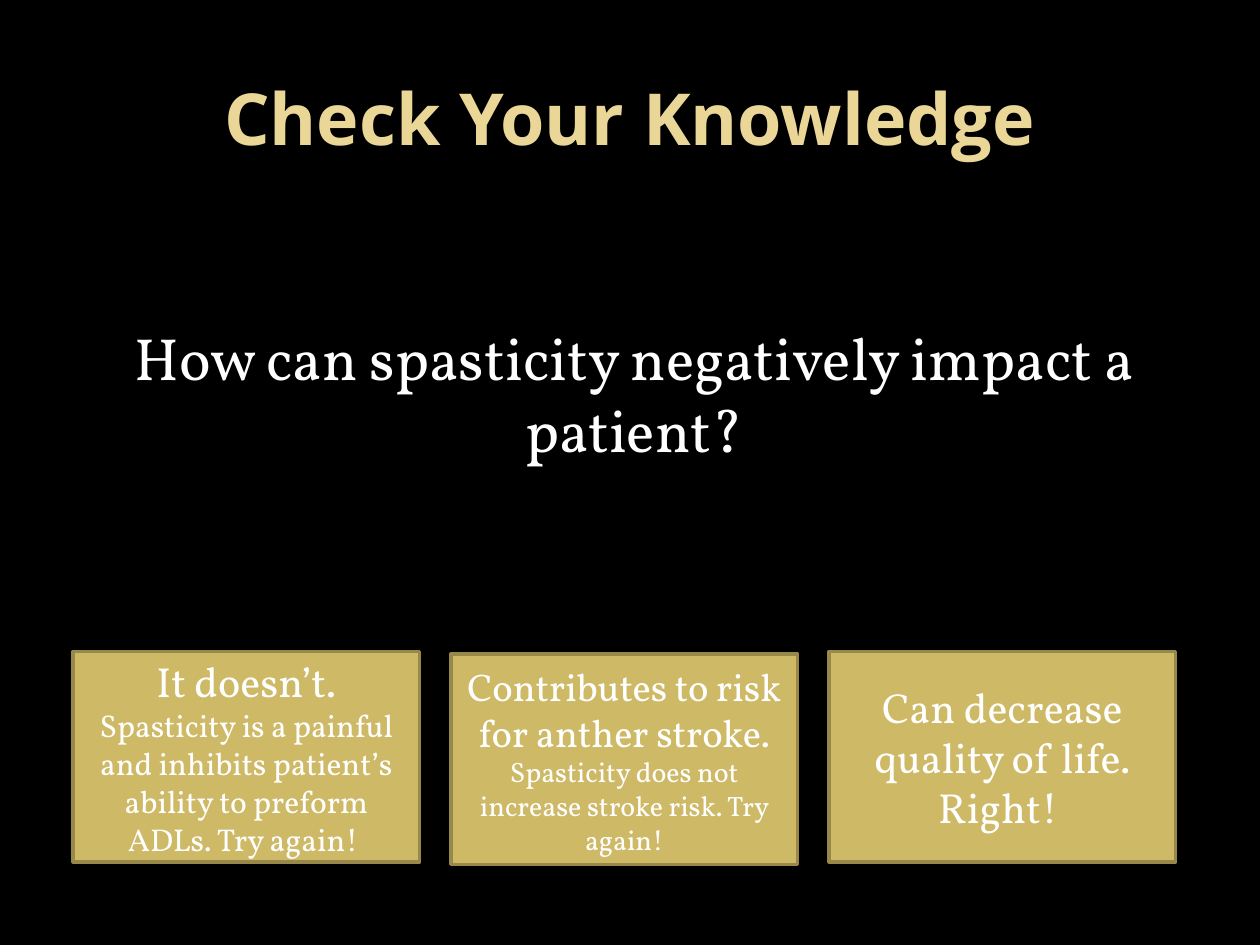
from pptx import Presentation
from pptx.dml.color import RGBColor
from pptx.enum import shapes, text
from pptx.util import Inches, Pt

BLACK = RGBColor(0x00, 0x00, 0x00)
WHITE = RGBColor(0xFF, 0xFF, 0xFF)
PALE_GOLD = RGBColor(0xEA, 0xD6, 0x96)
GOLD = RGBColor(0xCE, 0xB9, 0x66)
DARK_GOLD = RGBColor(0x98, 0x89, 0x4B)

TITLE_FORMAT = {"name": "Open Sans", "bold": True}
BODY_FORMAT = {"name": "Vollkorn"}

ANSWER_LEFT, ANSWER_STEP = 0.58, 3
ANSWER_WIDTH, ANSWER_HEIGHT = 2.75, 1.67
ANSWERS = [
    (5.17, [("It doesn’t.", 24),
            ("Spasticity is a painful and inhibits patient’s ability to "
             "preform ADLs. Try again! ", 18)]),
    (5.19, [("Contributes to risk for anther stroke.", 22),
            ("Spasticity does not increase stroke risk. Try again!", 16)]),
    (5.17, [("Can decrease quality of life.", 24), ("Right! ", 24)]),
]


def write_paragraph(paragraph, wording, size, color, font_format):
    paragraph.alignment = text.PP_ALIGN.CENTER
    run = paragraph.add_run()
    run.text = wording
    for name, value in font_format.items():
        setattr(run.font, name, value)
    run.font.size = Pt(size)
    run.font.color.rgb = color


def add_text(slide, box, wording, size, color, font_format, frame_format):
    shape = slide.shapes.add_textbox(*map(Inches, box))
    frame = shape.text_frame
    for name, value in {"word_wrap": True, **frame_format}.items():
        setattr(frame, name, value)
    write_paragraph(frame.paragraphs[0], wording, size, color, font_format)
    return frame


def add_answer(slide, left, top, lines):
    shape = slide.shapes.add_shape(
        shapes.MSO_SHAPE.RECTANGLE, Inches(left), Inches(top),
        Inches(ANSWER_WIDTH), Inches(ANSWER_HEIGHT))
    shape.shadow.inherit = False
    shape.fill.solid()
    shape.fill.fore_color.rgb = GOLD
    shape.line.color.rgb = DARK_GOLD
    shape.line.width = Pt(2)
    frame = shape.text_frame
    frame.word_wrap = True
    frame.vertical_anchor = text.MSO_ANCHOR.MIDDLE
    for index, (wording, size) in enumerate(lines):
        paragraph = frame.add_paragraph() if index else frame.paragraphs[0]
        write_paragraph(paragraph, wording, size, WHITE, BODY_FORMAT)


def main():
    presentation = Presentation()
    presentation.slide_width = Inches(10)
    presentation.slide_height = Inches(7.5)
    slide = presentation.slides.add_slide(presentation.slide_layouts[6])
    slide.background.fill.solid()
    slide.background.fill.fore_color.rgb = BLACK

    add_text(slide, (0.5, 0.3, 9, 1.25), "Check Your Knowledge", 41, PALE_GOLD,
             TITLE_FORMAT, {"vertical_anchor": text.MSO_ANCHOR.MIDDLE})
    question = add_text(slide, (0.46, 2.5, 9, 1.33),
                        "How can spasticity negatively impact a patient?", 34,
                        WHITE, BODY_FORMAT, {"margin_left": Inches(0.25)})
    question.paragraphs[0].space_before = Pt(7)

    for index, (top, lines) in enumerate(ANSWERS):
        add_answer(slide, ANSWER_LEFT + index * ANSWER_STEP, top, lines)

    presentation.save("out.pptx")


if __name__ == "__main__":
    main()
